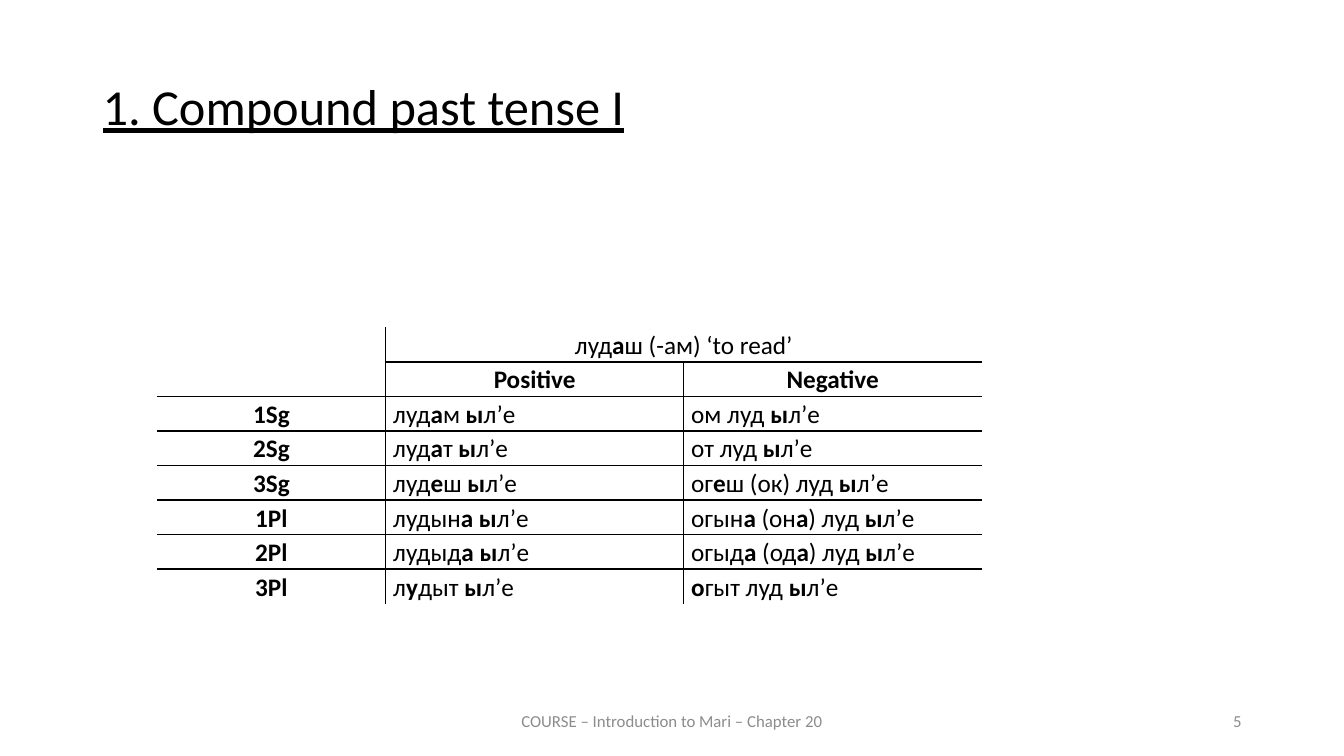
from lxml.etree import SubElement
from pptx import Presentation
from pptx.dml.color import RGBColor
from pptx.enum.text import MSO_ANCHOR as Anchor, MSO_AUTO_SIZE as AutoSize, PP_ALIGN as Align
from pptx.oxml.ns import qn
from pptx.util import Cm, Pt

COLORS = {"text": "000000", "footer": "8C8C8C", "border": "000000"}
FONT = "Calibri"
CONJUGATION = [
    ["", "луд*а*ш (-ам) ‘to read’", ""],
    ["", "*Positive*", "*Negative*"],
    ["*1Sg*", "луд*а*м *ы*л’е", "ом луд *ы*л’е"],
    ["*2Sg*", "луд*а*т *ы*л’е", "от луд *ы*л’е"],
    ["*3Sg*", "луд*е*ш *ы*л’е", "ог*е*ш (ок) луд *ы*л’е"],
    ["*1Pl*", "лудын*а ы*л’е", "огын*а* (он*а*) луд *ы*л’е"],
    ["*2Pl*", "лудыд*а ы*л’е", "огыд*а* (од*а*) луд *ы*л’е"],
    ["*3Pl*", "л*у*дыт *ы*л’е", "*о*гыт луд *ы*л’е"],
]


def add_spans(para, marked_text, size, color):
    for index, piece in enumerate(marked_text.split("*")):
        if piece:
            span = para.add_run()
            span.text = piece
            span.font.name = FONT
            span.font.size = Pt(size)
            span.font.bold = index % 2 == 1
            span.font.color.rgb = RGBColor.from_string(COLORS[color])


def set_borders(cell, sides):
    properties = cell._tc.get_or_add_tcPr()
    for side, visible in sides.items():
        line = SubElement(properties, qn(f"a:ln{side}"), w=str(Pt(1)))
        if visible:
            fill = SubElement(line, qn("a:solidFill"))
            SubElement(fill, qn("a:srgbClr"), val=COLORS["border"])
        else:
            SubElement(line, qn("a:noFill"))


deck = Presentation()
deck.slide_width, deck.slide_height = Cm(33.87), Cm(19.05)
page = deck.slides.add_slide(deck.slide_layouts[5])

title = page.shapes.title
title.left, title.top, title.width, title.height = Cm(2.33), Cm(1.93), Cm(29.21), Cm(2.11)
title.text_frame.auto_size = AutoSize.NONE
title.text_frame.vertical_anchor = Anchor.TOP
para = title.text_frame.paragraphs[0]
para.alignment = Align.JUSTIFY
para.line_spacing = 0.9
add_spans(para, "1. Compound past tense I", 36, "text")
para.runs[0].font.underline = True

table = page.shapes.add_table(8, 3, Cm(3.96), Cm(8.25), Cm(20.78), Cm(6.96)).table
table.first_row = table.horz_banding = False
for column, width in zip(table.columns, (5.76, 7.51, 7.51)):
    column.width = Cm(width)
for row in table.rows:
    row.height = Cm(0.87)
table.cell(0, 0).merge(table.cell(1, 0))
table.cell(0, 1).merge(table.cell(0, 2))

for row, texts in enumerate(CONJUGATION):
    for col, text in enumerate(texts):
        cell = table.cell(row, col)
        cell.margin_left = cell.margin_right = Cm(0.19)
        cell.margin_top = cell.margin_bottom = 0
        cell.vertical_anchor = Anchor.MIDDLE
        set_borders(cell, {
            "L": col == 1 or (col == 2 and row > 0),
            "R": col == 0 or (col == 1 and row > 0),
            "T": row > 1 or (row == 1 and col > 0),
            "B": row < 7,
        })
        cell.fill.background()
        para = cell.text_frame.paragraphs[0]
        para.alignment = Align.CENTER if row < 2 or col == 0 else Align.JUSTIFY
        para.line_spacing = 1.07
        add_spans(para, text, 18, "text")

for left, width, align, text in (
    (11.22, 11.43, Align.CENTER, "COURSE – Introduction to Mari – Chapter 20"),
    (23.92, 7.62, Align.RIGHT, "5"),
):
    box = page.shapes.add_textbox(Cm(left), Cm(17.66), Cm(width), Cm(1.01))
    box.text_frame.word_wrap = True
    box.text_frame.vertical_anchor = Anchor.MIDDLE
    para = box.text_frame.paragraphs[0]
    para.alignment = align
    add_spans(para, text, 12, "footer")

deck.save("out.pptx")
